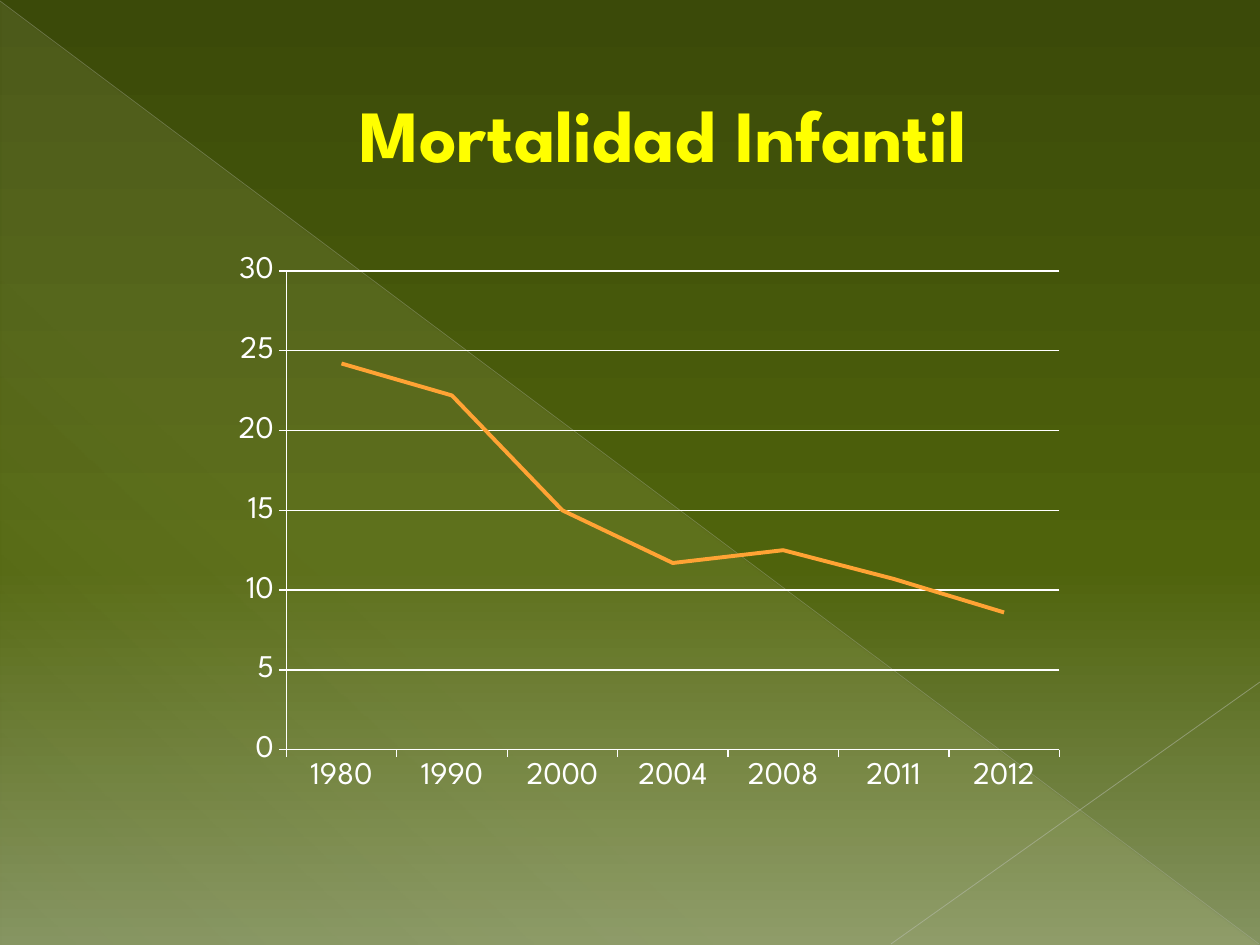
from lxml.etree import SubElement
from pptx import Presentation
from pptx.chart.data import CategoryChartData
from pptx.dml.color import RGBColor
from pptx.enum.chart import XL_CHART_TYPE as Chart, XL_MARKER_STYLE as Marker, XL_TICK_MARK as Tick
from pptx.enum.shapes import MSO_CONNECTOR as Link, MSO_SHAPE as Shape
from pptx.enum.text import MSO_ANCHOR as Anchor, PP_ALIGN as Align
from pptx.oxml import parse_xml
from pptx.oxml.ns import nsdecls, qn
from pptx.util import Emu, Pt

FONT = "League Spartan"
WHITE = RGBColor(0xFF, 0xFF, 0xFF)
YELLOW = RGBColor(0xFF, 0xFF, 0x00)
ORANGE = RGBColor(0xFF, 0xA3, 0x34)
EDGE = RGBColor(0x72, 0x7D, 0x65)
CREAM = RGBColor(0xFE, 0xFA, 0xC9)
DARK = RGBColor(0x3B, 0x4A, 0x09)
OLIVE = RGBColor(0x4F, 0x63, 0x0C)
SAGE = RGBColor(0x84, 0x93, 0x60)
GREY = RGBColor(0xBA, 0xBD, 0xB3)
SILVER = RGBColor(0xC1, 0xC4, 0xBC)

TITLE = "Mortalidad Infantil"
RATES = {"1980": 24.2, "1990": 22.2, "2000": 15, "2004": 11.7,
         "2008": 12.5, "2011": 10.7, "2012": 8.6}
# Gradient stops: position %, colour, opacity %
SKY = [(0, DARK, 100), (60, OLIVE, 100), (100, SAGE, 100)]
GLOW = [(0, CREAM, 10), (70, CREAM, 8), (100, CREAM, 1)]
# Lines: start and end, colour, width in points, opacity %
RAYS = [((0, 1, 1259, 944), GREY, 0.39, 35),
        ((1260, 682, 891, 944), SILVER, 0.47, 45)]
PLOT = {"x": 0.079, "y": 0.034, "w": 0.921, "h": 0.855}


def px(*nums):
    return [Emu(round(n * 914400 / 126)) for n in nums]


def fade(clr, alpha):
    SubElement(clr, qn("a:alpha")).set("val", str(alpha * 1000))


def set_grad(fill, root, stops, angle):
    """Give a fill any number of stops, with opacity and a clockwise angle."""
    fill.gradient()
    grad = next(root.iter(qn("a:gradFill")))
    for kid in list(grad):
        grad.remove(kid)
    row = SubElement(grad, qn("a:gsLst"))
    for pos, color, alpha in stops:
        stop = SubElement(row, qn("a:gs"), pos=str(pos * 1000))
        clr = SubElement(stop, qn("a:srgbClr"), val=str(color))
        if alpha < 100:
            fade(clr, alpha)
    SubElement(grad, qn("a:lin"), ang=str(angle * 60000), scaled="0")


def put_text(frame, text, size, color, bold=False, align=Align.LEFT, indent=0, edge=None):
    para = frame.paragraphs[0]
    para.alignment = align
    props = para._p.get_or_add_pPr()
    props.set("marL", str(px(indent)[0]))
    props.set("indent", "0")
    run = para.add_run()
    run.text = text
    font = run.font
    font.name, font.size, font.bold = FONT, Pt(size), bold
    font.color.rgb = color
    if edge is not None:
        run._r.get_or_add_rPr().insert(0, parse_xml(
            f'<a:ln {nsdecls("a")} w="{Pt(0.5)}"><a:solidFill>'
            f'<a:srgbClr val="{edge}"/></a:solidFill></a:ln>'))


def add_decor(slide):
    back = slide.background.fill
    set_grad(back, slide._element, SKY, 90)
    glow = slide.shapes.add_shape(Shape.RIGHT_TRIANGLE, *px(1, 2, 1258, 943))
    glow.shadow.inherit = False
    glow.line.fill.background()
    set_grad(glow.fill, glow._element, GLOW, 133)
    for ends, color, width, alpha in RAYS:
        ray = slide.shapes.add_connector(Link.STRAIGHT, *px(*ends))
        ray.line.width = Pt(width)
        ray.line.color.rgb = color
        fade(next(ray._element.iter(qn("a:srgbClr"))), alpha)
        SubElement(ray._element.spPr, qn("a:effectLst"))


def add_title(slide):
    title = slide.shapes.title
    slide.shapes._spTree.append(title._element)  # in front of the decor
    title.left, title.top, title.width, title.height = px(63, 37, 1134, 193)
    title.text_frame.vertical_anchor = Anchor.MIDDLE
    put_text(title.text_frame, TITLE, 42, YELLOW, bold=True,
             align=Align.CENTER, indent=67, edge=EDGE)


def add_rates(slide):
    data = CategoryChartData()
    data.categories = list(RATES)
    data.add_series("Series 1", list(RATES.values()))
    chart = slide.shapes.add_chart(Chart.LINE, *px(220, 252, 840, 560), data).chart
    chart.has_legend = chart.has_title = False
    chart.font.name, chart.font.size = FONT, Pt(18)
    chart.font.color.rgb = WHITE

    years, scale = chart.category_axis, chart.value_axis
    scale.minimum_scale, scale.maximum_scale, scale.major_unit = 0, 30, 5
    scale.has_major_gridlines = True
    for axis in (years, scale):
        axis.major_tick_mark, axis.minor_tick_mark = Tick.OUTSIDE, Tick.NONE
    for part in (years, scale, scale.major_gridlines):
        part.format.line.color.rgb = WHITE
        part.format.line.width = Pt(0.75)

    chart.plots[0].vary_by_categories = False
    line = chart.plots[0].series[0]
    line.smooth = False
    line.marker.style = Marker.NONE
    line.format.line.color.rgb = ORANGE
    line.format.line.width = Pt(2.25)

    area = chart._chartSpace.chart.plotArea
    for old in area.findall(qn("c:layout")):
        area.remove(old)
    sides = "".join(f'<c:{key} val="{val}"/>' for key, val in PLOT.items())
    area.insert(0, parse_xml(
        f'<c:layout {nsdecls("c")}><c:manualLayout><c:layoutTarget val="inner"/>'
        f'<c:xMode val="edge"/><c:yMode val="edge"/>{sides}</c:manualLayout></c:layout>'))


def main():
    deck = Presentation()
    deck.slide_width, deck.slide_height = px(1260, 945)
    slide = deck.slides.add_slide(deck.slide_layouts[5])
    add_decor(slide)
    add_title(slide)
    add_rates(slide)
    deck.save("out.pptx")


if __name__ == "__main__":
    main()
